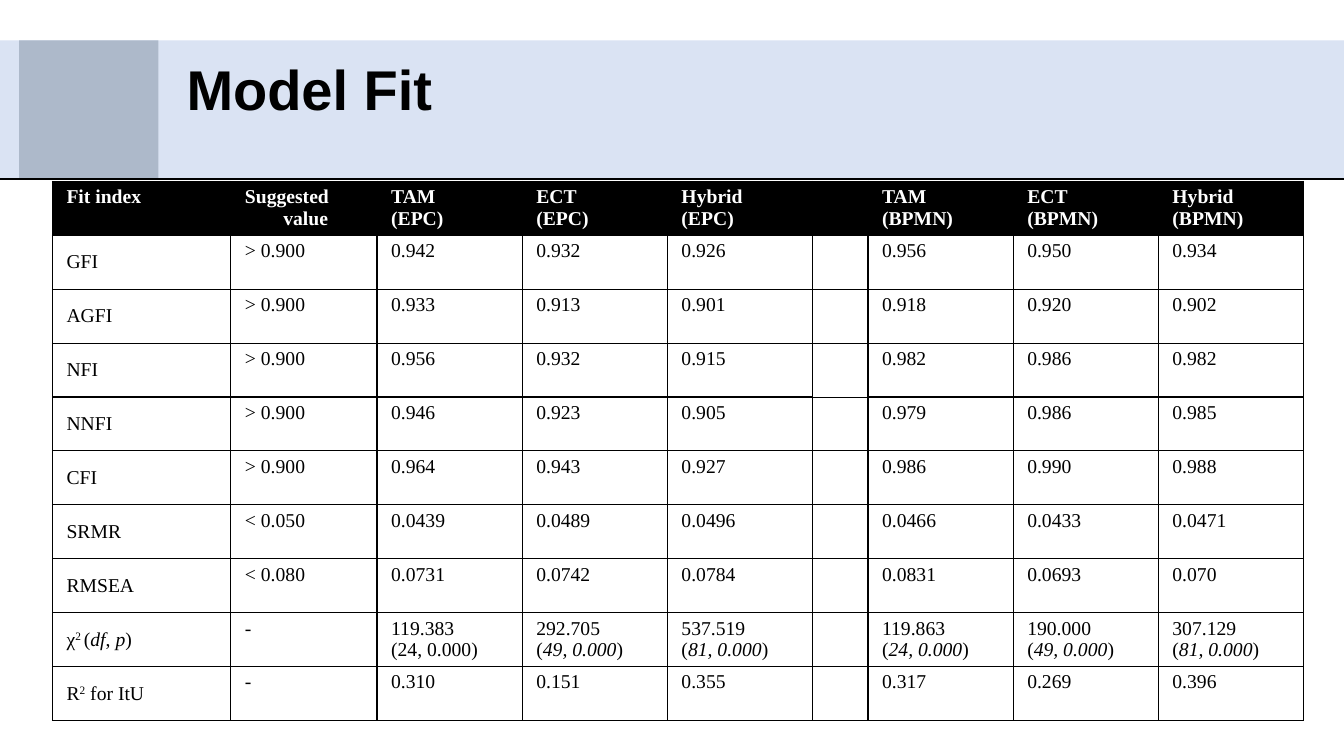
from lxml import etree
from pptx import Presentation
from pptx import util as u
from pptx.dml.color import RGBColor
from pptx.enum import shapes, text
from pptx.oxml import ns

TITLE = "Model Fit"
HEAD = ["Fit index", "Suggested value", "TAM\n(EPC)", "ECT\n(EPC)", "Hybrid\n(EPC)", "",
        "TAM\n(BPMN)", "ECT\n(BPMN)", "Hybrid\n(BPMN)"]
# MARKS: "|" parts runs, "^" raises, "_" slants
BODY = [
    ["GFI", "> 0.900", "0.942", "0.932", "0.926", "", "0.956", "0.950", "0.934"],
    ["AGFI", "> 0.900", "0.933", "0.913", "0.901", "", "0.918", "0.920", "0.902"],
    ["NFI", "> 0.900", "0.956", "0.932", "0.915", "", "0.982", "0.986", "0.982"],
    ["NNFI", "> 0.900", "0.946", "0.923", "0.905", "", "0.979", "0.986", "0.985"],
    ["CFI", "> 0.900", "0.964", "0.943", "0.927", "", "0.986", "0.990", "0.988"],
    ["SRMR", "< 0.050", "0.0439", "0.0489", "0.0496", "", "0.0466", "0.0433", "0.0471"],
    ["RMSEA", "< 0.080", "0.0731", "0.0742", "0.0784", "", "0.0831", "0.0693", "0.070"],
    ["χ|^2 |(|_df|, |_p|)", "-", "119.383\n(24, 0.000)", "292.705\n(|_49, 0.000|)",
     "537.519\n(|_81, 0.000|)", "", "119.863\n(|_24, 0.000|)", "190.000\n(|_49, 0.000|)",
     "307.129\n(|_81, 0.000|)"],
    ["R|^2| for ItU", "-", "0.310", "0.151", "0.355", "", "0.317", "0.269", "0.396"],
]
HUES = {"band": "DAE3F3", "block": "ADB9CA", "ink": "000000", "paper": "FFFFFF"}
WIDE, HIGH = 13.33, 7.5
TOP, BAND = 0.4, 1.38
LEFT, START, ROW = 0.52, 1.8, 0.535
COLS = [1.77, 1.45] + [1.44] * 3 + [0.55] + [1.44] * 3
GAP = 5


def hue(name):
    return RGBColor.from_string(HUES[name])


def write(frame, words, size=14, face="Times New Roman", ink="ink", bold=False,
          align=text.PP_ALIGN.JUSTIFY, hang=0):
    for i, line in enumerate(words.split("\n")):
        para = frame.paragraphs[0] if i == 0 else frame.add_paragraph()
        para.alignment = align
        if hang:
            props = para._p.get_or_add_pPr()
            props.set("marL", str(u.Inches(hang)))
            props.set("indent", str(-u.Inches(hang)))
        for part in line.split("|"):
            run = para.add_run()
            run.text = part.lstrip("^_")
            font = run.font
            font.size, font.name, font.bold = u.Pt(size), face, bold
            font.italic = part.startswith("_")
            font.color.rgb = hue(ink)
            if part.startswith("^"):
                run._r.get_or_add_rPr().set("baseline", "30000")


def edge(cell, side, width):
    line = etree.SubElement(cell._tc.get_or_add_tcPr(), ns.qn("a:ln" + side),
                            w=str(u.Pt(width)))
    fill = etree.SubElement(line, ns.qn("a:solidFill"))
    etree.SubElement(fill, ns.qn("a:srgbClr"), val=HUES["ink"])


def block(slide, left, width, name):
    box = slide.shapes.add_shape(shapes.MSO_SHAPE.RECTANGLE, u.Inches(left), u.Inches(TOP),
                                 u.Inches(width), u.Inches(BAND))
    box.shadow.inherit = False
    box.fill.solid()
    box.fill.fore_color.rgb = hue(name)
    box.line.fill.background()


def banner(slide):
    block(slide, 0, WIDE, "band")
    block(slide, 0.19, BAND, "block")
    base = u.Inches(TOP + BAND)
    rule = slide.shapes.add_connector(shapes.MSO_CONNECTOR.STRAIGHT, 0, base,
                                      u.Inches(WIDE), base)
    rule.line.color.rgb = hue("ink")
    rule.line.width = u.Pt(1.5)
    etree.SubElement(rule._element.spPr, ns.qn("a:effectLst"))


def grid(slide):
    rows = [HEAD] + BODY
    table = slide.shapes.add_table(len(rows), len(COLS), u.Inches(LEFT), u.Inches(START),
                                   u.Inches(sum(COLS)), u.Inches(ROW * len(rows))).table
    for col, width in zip(table.columns, COLS):
        col.width = u.Inches(width)
    for r, row in enumerate(rows):
        table.rows[r].height = u.Inches(ROW)
        for c, words in enumerate(row):
            cell = table.cell(r, c)
            cell.margin_left = cell.margin_right = u.Inches(0.14)
            cell.margin_top = cell.margin_bottom = u.Inches(0.05)
            if r and c == 0:
                cell.vertical_anchor = text.MSO_ANCHOR.MIDDLE
            thin = {"T": r > 0, "B": r < len(rows) - 1}
            for side in "LRTB":
                edge(cell, side, 0.75 if c == GAP and thin.get(side) else 1)
            cell.fill.solid()
            cell.fill.fore_color.rgb = hue("paper" if r else "ink")
            if words:
                write(cell.text_frame, words, hang=0.38, bold=r == 0,
                      ink="ink" if r else "paper")


def head(slide):
    title = slide.shapes.title
    title.left, title.top = u.Inches(1.75), u.Inches(TOP)
    title.width, title.height = u.Inches(WIDE - 1.75), u.Inches(0.95)
    frame = title.text_frame
    frame.word_wrap = True
    frame.auto_size = text.MSO_AUTO_SIZE.NONE
    frame.vertical_anchor = text.MSO_ANCHOR.MIDDLE
    write(frame, TITLE, size=40, face="Arial", bold=True, align=text.PP_ALIGN.LEFT)
    slide.shapes._spTree.append(title._element)


def main():
    deck = Presentation()
    deck.slide_width, deck.slide_height = u.Inches(WIDE), u.Inches(HIGH)
    slide = deck.slides.add_slide(deck.slide_layouts[5])
    banner(slide)
    grid(slide)
    head(slide)
    deck.save("out.pptx")


if __name__ == "__main__":
    main()
